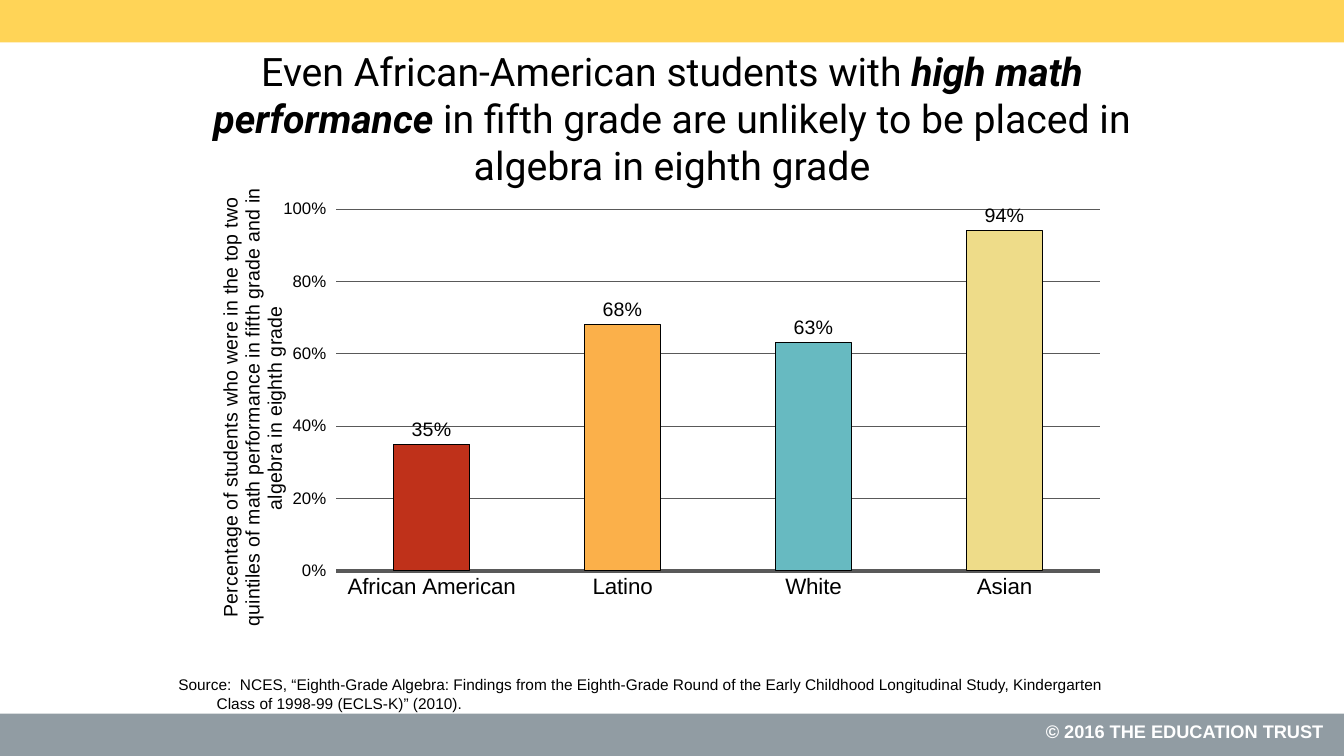
from pptx import Presentation
from pptx.chart.data import CategoryChartData
from pptx.dml.color import RGBColor
from pptx.enum.chart import XL_CHART_TYPE as ChartType
from pptx.enum.chart import XL_LABEL_POSITION as LabelPosition
from pptx.enum.chart import XL_TICK_MARK as TickMark
from pptx.enum.shapes import MSO_SHAPE as ShapeKind
from pptx.enum.text import PP_ALIGN as Align
from pptx.oxml import parse_xml
from pptx.oxml.ns import nsdecls
from pptx.util import Inches, Pt

BLACK = RGBColor(0x00, 0x00, 0x00)
WHITE = RGBColor(0xFF, 0xFF, 0xFF)
YELLOW = RGBColor(0xFF, 0xD4, 0x57)
SLATE = RGBColor(0x91, 0x9C, 0xA3)
GRID_GRAY = RGBColor(0x59, 0x59, 0x59)
RED = RGBColor(0xBF, 0x31, 0x1A)
ORANGE = RGBColor(0xFB, 0xB0, 0x4A)
TEAL = RGBColor(0x67, 0xBA, 0xC1)
SAND = RGBColor(0xEE, 0xDC, 0x89)

PLACEMENT_SHARES = [
    ("African American", 0.35, RED),
    ("Latino", 0.68, ORANGE),
    ("White", 0.63, TEAL),
    ("Asian", 0.94, SAND),
]
AXIS_TITLE = (
    "Percentage of students who were in the top two quintiles of math "
    "performance in fifth grade and in algebra in eighth grade"
)
SOURCE = (
    "Source:  NCES, “Eighth-Grade Algebra: Findings from the Eighth-Grade Round "
    "of the Early Childhood Longitudinal Study, Kindergarten Class of 1998-99 "
    "(ECLS-K)” (2010)."
)


def manual_layout(target, **values):
    fields = "".join(f'<c:{name} val="{value}"/>' for name, value in values.items())
    layout = parse_xml(
        f'<c:layout {nsdecls("c")}><c:manualLayout>{fields}</c:manualLayout></c:layout>'
    )
    for previous in target.findall(layout.tag):
        target.remove(previous)
    return layout


class SlideBuilder:
    body_font = "Arial"
    title_font = "Roboto"

    def __init__(self, slide):
        self.slide = slide

    def style(self, font, size, color=BLACK, name=body_font, bold=False, italic=False):
        font.name = name
        font.size = Pt(size)
        font.color.rgb = color
        font.bold = bold
        font.italic = italic

    def band(self, top):
        return self.slide.shapes.add_shape(
            ShapeKind.RECTANGLE, 0, Inches(top), Inches(13.33), Inches(0.42)
        )

    def colored_band(self, top, color):
        shape = self.band(top)
        shape.shadow.inherit = False
        shape.fill.solid()
        shape.fill.fore_color.rgb = color
        shape.line.fill.background()

    def text(self, box, pieces, size, align=Align.LEFT, color=BLACK, name=body_font):
        frame = self.slide.shapes.add_textbox(*map(Inches, box)).text_frame
        frame.word_wrap = True
        paragraph = frame.paragraphs[0]
        paragraph.alignment = align
        for content, emphasis in pieces:
            run = paragraph.add_run()
            run.text = content
            self.style(run.font, size, color, name, **emphasis)
        return paragraph

    def column_chart(self, box, rows, axis_title):
        data = CategoryChartData(number_format="0%")
        data.categories = [label for label, _, _ in rows]
        data.add_series("Series 1", [share for _, share, _ in rows])
        chart = self.slide.shapes.add_chart(
            ChartType.COLUMN_CLUSTERED, *map(Inches, box), data
        ).chart
        self.style(chart.font, 18)
        chart.has_legend = False
        chart.has_title = False
        self.columns(chart.plots[0], [color for _, _, color in rows])
        self.category_axis(chart.category_axis)
        self.value_axis(chart.value_axis, axis_title)
        plot_area = chart.plots[0]._element.getparent()
        plot_area.insert(0, manual_layout(
            plot_area, layoutTarget="inner", xMode="edge", yMode="edge",
            x=0.143, y=0.253, w=0.812, h=0.647,
        ))

    def columns(self, plot, colors):
        plot.vary_by_categories = False
        plot.gap_width = 150
        series = plot.series[0]
        for index, color in enumerate(colors):
            point_format = series.points[index].format
            point_format.fill.solid()
            point_format.fill.fore_color.rgb = color
            point_format.line.color.rgb = BLACK
            point_format.line.width = Pt(0.75)
        labels = series.data_labels
        labels.show_value = True
        labels.number_format = "0%"
        labels.number_format_is_linked = False
        labels.position = LabelPosition.OUTSIDE_END
        self.style(labels.font, 14)

    def category_axis(self, axis):
        axis.major_tick_mark = TickMark.NONE
        axis.format.line.color.rgb = GRID_GRAY
        axis.format.line.width = Pt(2.5)
        self.style(axis.tick_labels.font, 16)

    def value_axis(self, axis, title):
        axis.minimum_scale = 0
        axis.maximum_scale = 1
        axis.major_unit = 0.2
        axis.major_tick_mark = TickMark.OUTSIDE
        axis.format.line.fill.background()
        axis.major_gridlines.format.line.color.rgb = GRID_GRAY
        axis.major_gridlines.format.line.width = Pt(0.75)
        axis.tick_labels.number_format = "0%"
        axis.tick_labels.number_format_is_linked = False
        self.style(axis.tick_labels.font, 12)
        frame = axis.axis_title.text_frame
        frame.text = title
        self.style(frame.paragraphs[0].runs[0].font, 14)
        body = frame._txBody.bodyPr
        body.set("rot", "-5400000")
        body.set("vert", "horz")
        element = axis.axis_title._element
        layout = manual_layout(element, xMode="edge", yMode="edge", x=0.013, y=0.214)
        frame._txBody.getparent().addnext(layout)


def main():
    presentation = Presentation()
    presentation.slide_width = Inches(13.33)
    presentation.slide_height = Inches(7.5)
    slide = presentation.slides.add_slide(presentation.slide_layouts[6])
    builder = SlideBuilder(slide)

    builder.colored_band(0, YELLOW)
    builder.colored_band(7.08, SLATE)
    copyright_line = builder.text(
        (8, 7.09, 5.22, 0.33), [("© 2016 THE EDUCATION TRUST", {"bold": True})],
        13, Align.RIGHT, WHITE,
    )
    copyright_line.line_spacing = Pt(16)

    builder.column_chart((2, 0.67, 9.33, 5.58), PLACEMENT_SHARES, AXIS_TITLE)

    source = builder.text((1.67, 6.65, 9.69, 0.14), [(SOURCE, {})], 11)
    properties = source._p.get_or_add_pPr()
    properties.set("marL", str(Inches(0.38)))
    properties.set("indent", str(-Inches(0.38)))

    title = [
        ("Even African-American students with ", {}),
        ("high math performance ", {"bold": True, "italic": True}),
        ("in fifth grade are unlikely to be placed in algebra in eighth grade", {}),
    ]
    builder.text(
        (1.83, 0.42, 9.67, 1.51), title, 28, Align.CENTER, name=builder.title_font
    )
    presentation.save("out.pptx")


if __name__ == "__main__":
    main()
